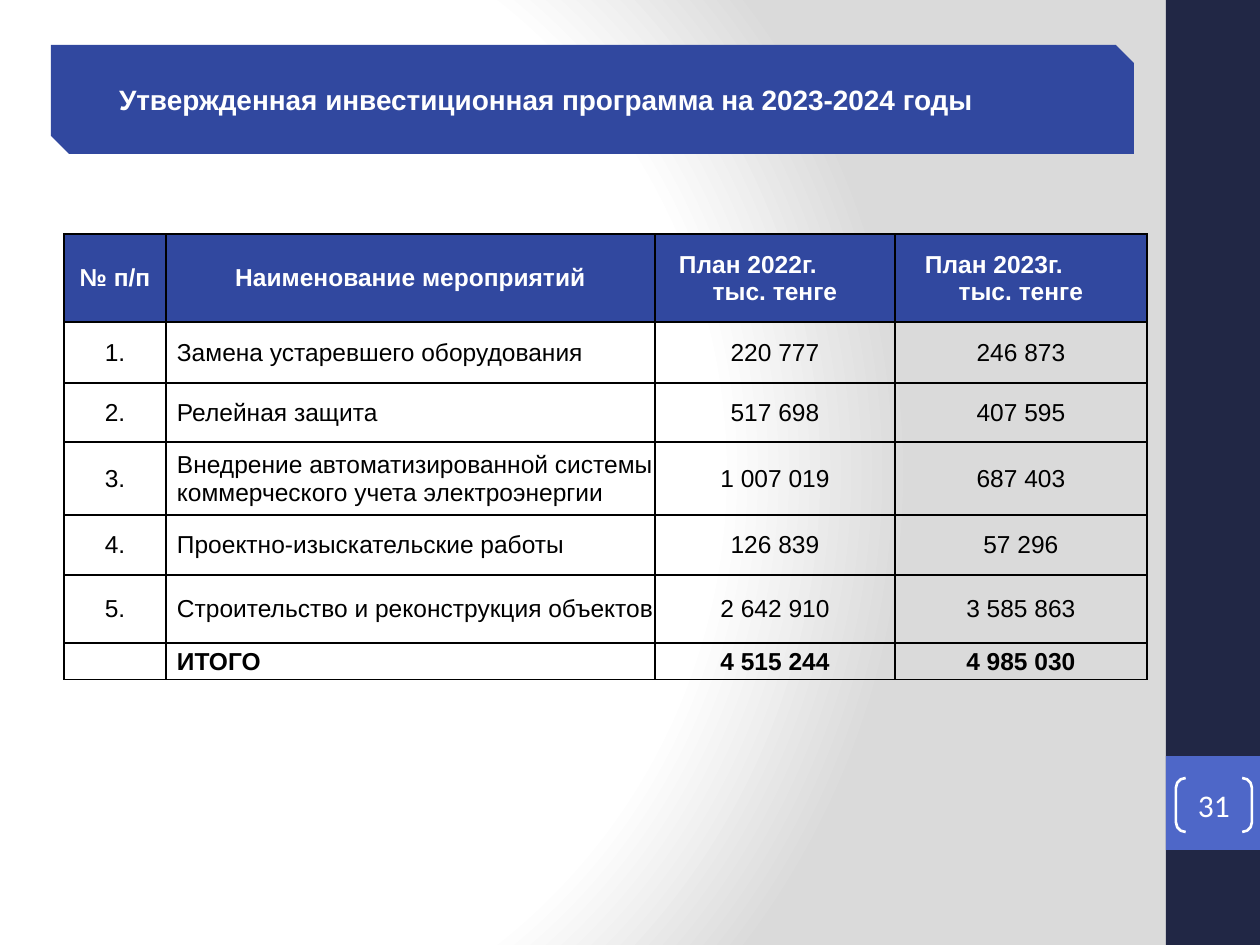
from pptx import Presentation
from pptx.dml.color import RGBColor
from pptx.enum.shapes import MSO_SHAPE
from pptx.enum.text import MSO_ANCHOR, PP_ALIGN
from pptx.oxml import parse_xml
from pptx.oxml.ns import nsdecls
from pptx.util import Pt

PX = 914400 // 126
LEFT, CENTER = PP_ALIGN.LEFT, PP_ALIGN.CENTER
MIDDLE = MSO_ANCHOR.MIDDLE
COLORS = {"white": "FFFFFF", "black": "000000", "gray": "DADADA",
          "blue": "31489F", "navy": "212745", "accent": "4E67C8"}
COLUMNS = [102, 489, 240, 252]
ROWS = [88, 61, 59, 73, 60, 68, 37]
HEADER_TEXT_WIDTH = 194
DATA = [
    ["№ п/п", "Наименование мероприятий", "План 2022г.\nтыс. тенге", "План 2023г.\nтыс. тенге"],
    ["1.", "Замена устаревшего оборудования", "220 777", "246 873"],
    ["2.", "Релейная защита", "517 698", "407 595"],
    ["3.", "Внедрение автоматизированной системы коммерческого учета электроэнергии",
     "1 007 019", "687 403"],
    ["4.", "Проектно-изыскательские работы", "126 839", "57 296"],
    ["5.", "Строительство и реконструкция объектов", "2 642 910", "3 585 863"],
    ["", "ИТОГО", "4 515 244", "4 985 030"],
]


def rgb(name):
    return RGBColor.from_string(COLORS[name])


def emu(*lengths):
    return [length * PX for length in lengths]


def set_font(para, size, color, bold=False, name="Arial"):
    para.font.name, para.font.size, para.font.bold = name, Pt(size), bold
    para.font.color.rgb = rgb(color)


def set_margins(target, left, top, right, bottom):
    target.margin_left, target.margin_top, target.margin_right, target.margin_bottom = emu(
        left, top, right, bottom)


def add_block(page, kind, box, color=None):
    block = page.shapes.add_shape(kind, *emu(*box))
    block.shadow.inherit = False
    block.line.fill.background()
    if color:
        block.fill.solid()
        block.fill.fore_color.rgb = rgb(color)
    else:
        block.fill.background()
    return block


def set_background(page):
    stops = "".join(
        f'<a:gs pos="{position}000"><a:srgbClr val="{COLORS[color]}"/></a:gs>'
        for position, color in [(0, "white"), (75, "white"), (100, "gray")])
    page.element.cSld.insert(0, parse_xml(
        f'<p:bg {nsdecls("p", "a")}><p:bgPr><a:gradFill rotWithShape="1"><a:gsLst>{stops}</a:gsLst>'
        '<a:path path="circle"><a:fillToRect l="20000" t="50000" r="100000" b="50000"/></a:path>'
        '</a:gradFill><a:effectLst/></p:bgPr></p:bg>'))


def add_sidebar(page, box, number):
    left, top, width, height = box
    add_block(page, MSO_SHAPE.RECTANGLE, box, "navy")
    badge_top = top + height * 4 // 5
    add_block(page, MSO_SHAPE.RECTANGLE, (left, badge_top, width, width), "accent")
    bracket = add_block(page, MSO_SHAPE.DOUBLE_BRACKET, (left + 10, badge_top + 22, 76, 54))
    bracket.adjustments[0] = 0.18
    bracket.line.color.rgb = rgb("white")
    bracket.line.width = Pt(1.5)
    frame = bracket.text_frame
    set_margins(frame, 0, 0, 0, 0)
    frame.vertical_anchor = MIDDLE
    para = frame.paragraphs[0]
    para.text = number
    para.alignment = CENTER
    set_font(para, 18, "white", name="Calibri")


def add_banner(page, box, text):
    left, top, width, height = box
    banner = add_block(page, MSO_SHAPE.SNIP_2_DIAG_RECTANGLE, box, "blue")
    title = page.shapes.title
    title.left, title.top, title.width, title.height = emu(left + 68, top, width - 86, height)
    banner.element.addnext(title.element)
    frame = title.text_frame
    frame.word_wrap = True
    frame.vertical_anchor = MIDDLE
    set_margins(frame, 0, 5, 0, 5)
    para = frame.paragraphs[0]
    para.text = text
    para.alignment = LEFT
    set_font(para, 16, "white", bold=True)


def set_borders(cell):
    properties = cell._tc.get_or_add_tcPr()
    for index, side in enumerate(["lnL", "lnR", "lnT", "lnB"]):
        properties.insert(index, parse_xml(
            f'<a:{side} {nsdecls("a")} w="12700"><a:solidFill>'
            f'<a:srgbClr val="{COLORS["black"]}"/></a:solidFill></a:{side}>'))


def fill_cell(cell, text, row, column):
    header = row == 0
    named = column == 1 and not header
    cell.vertical_anchor = MIDDLE
    set_margins(cell, 11 if named else 1, 1, 1, 0)
    if header:
        cell.fill.solid()
        cell.fill.fore_color.rgb = rgb("blue")
    else:
        cell.fill.background()
    set_borders(cell)
    cell.text = text
    paras = cell.text_frame.paragraphs
    for para in paras:
        para.alignment = LEFT if named else CENTER
        set_font(para, 14, "white" if header else "black", header or row == len(DATA) - 1)
    if len(paras) > 1:
        paras[0].alignment = LEFT
        indent = (COLUMNS[column] - HEADER_TEXT_WIDTH) // 2
        paras[0]._p.get_or_add_pPr().set("marL", str(indent * PX))


def add_plan_table(page, left, top):
    box = emu(left, top, sum(COLUMNS), sum(ROWS))
    table = page.shapes.add_table(len(ROWS), len(COLUMNS), *box).table
    table.first_row = table.horz_banding = False
    for column, width in zip(table.columns, COLUMNS):
        column.width = width * PX
    for row, height in zip(table.rows, ROWS):
        row.height = height * PX
    for row, values in enumerate(DATA):
        for column, text in enumerate(values):
            fill_cell(table.cell(row, column), text, row, column)


def main():
    deck = Presentation()
    deck.slide_width, deck.slide_height = emu(1260, 945)
    page = deck.slides.add_slide(deck.slide_layouts[5])
    set_background(page)
    add_sidebar(page, (1166, 0, 94, 945), "31")
    add_banner(page, (51, 45, 1083, 109), "Утвержденная инвестиционная программа на 2023-2024 годы")
    add_plan_table(page, 64, 234)
    deck.save("out.pptx")


if __name__ == "__main__":
    main()
